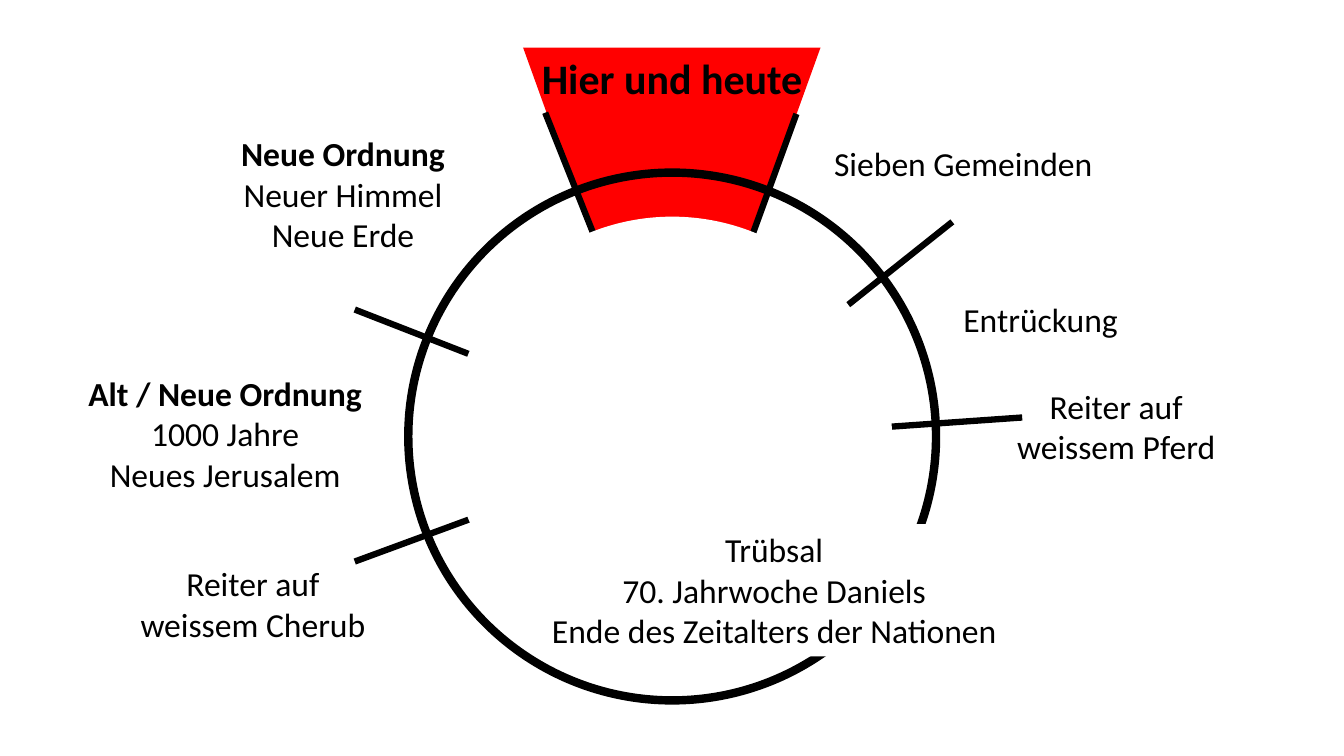
"""Draw a circular timeline of the ages with today highlighted at the top."""
from dataclasses import dataclass

from lxml.etree import SubElement
from pptx import Presentation
from pptx.dml.color import RGBColor
from pptx.enum.shapes import MSO_CONNECTOR, MSO_SHAPE
from pptx.enum.text import MSO_ANCHOR, MSO_AUTO_SIZE, PP_ALIGN
from pptx.oxml.ns import qn
from pptx.shapes.autoshape import Shape
from pptx.slide import Slide
from pptx.util import Cm, Pt

WIDTH, HEIGHT = 33.87, 19.05
CENTER_X, CENTER_Y = 16.94, 11.0
RING, DISC = 13.3, 11.08
BAND = 1.2
BLACK, WHITE, RED = "000000", "FFFFFF", "FF0000"


@dataclass
class Spoke:
    hub_x: float
    hub_y: float
    tip_x: float
    tip_y: float


@dataclass
class Label:
    left: float
    top: float
    width: float
    height: float
    lines: tuple[str, ...]
    heading: bool = False
    fill: str | None = None


SPOKES = [
    Spoke(17.04, 11.13, 13.74, 2.84),
    Spoke(17.04, 11.2, 20.07, 2.87),
    Spoke(17.04, 11.13, 24, 5.59),
    Spoke(17.04, 11.13, 25.76, 10.52),
    Spoke(17.15, 11.13, 8.94, 14.15),
    Spoke(17.15, 11, 8.94, 7.8),
]

LABELS = [
    Label(20.73, 3.48, 7.09, 1.28, ("Sieben Gemeinden",)),
    Label(24, 7.42, 4.45, 1.28, ("Entrückung",)),
    Label(25.35, 9.6, 5.56, 2.31, ("Reiter auf", "weissem Pferd")),
    Label(13.59, 13.21, 11.84, 3.33,
          ("Trübsal", "70. Jahrwoche Daniels", "Ende des Zeitalters der Nationen"),
          fill=WHITE),
    Label(3.25, 14.07, 6.25, 2.31, ("Reiter auf", "weissem Cherub")),
    Label(1.93, 9.27, 7.49, 3.33,
          ("Alt / Neue Ordnung", "1000 Jahre", "Neues Jerusalem"), heading=True),
    Label(5.66, 3.23, 5.97, 3.33,
          ("Neue Ordnung", "Neuer Himmel", "Neue Erde"), heading=True),
]


def color(code: str) -> RGBColor:
    """Turn a hex string into a colour."""
    return RGBColor.from_string(code)


def add_filled(s: Slide, kind: MSO_SHAPE, left: float, top: float,
               width: float, height: float, fill: str) -> Shape:
    """Add a filled shape without outline."""
    sp = s.shapes.add_shape(kind, Cm(left), Cm(top), Cm(width), Cm(height))
    sp.shadow.inherit = False
    sp.fill.solid()
    sp.fill.fore_color.rgb = color(fill)
    sp.line.fill.background()
    return sp


def add_circle(s: Slide, size: float, fill: str) -> Shape:
    """Add a circle around the common centre."""
    return add_filled(s, MSO_SHAPE.OVAL, CENTER_X - size / 2, CENTER_Y - size / 2,
                      size, size, fill)


def add_spoke(s: Slide, spoke: Spoke) -> None:
    """Add a line from the hub across the ring."""
    line = s.shapes.add_connector(MSO_CONNECTOR.STRAIGHT, Cm(spoke.hub_x), Cm(spoke.hub_y),
                                  Cm(spoke.tip_x), Cm(spoke.tip_y))
    line.line.color.rgb = color(BLACK)
    line.line.width = Pt(4.5)
    SubElement(line.element.spPr, qn("a:effectLst"))


def write(sp: Shape, lines: tuple[str, ...], size: int, heading: bool) -> None:
    """Fill a shape with centred lines, the first one bold for a heading."""
    tf = sp.text_frame
    tf.text = "\n".join(lines)
    tf.word_wrap = False
    tf.auto_size = MSO_AUTO_SIZE.SHAPE_TO_FIT_TEXT
    tf.vertical_anchor = MSO_ANCHOR.TOP
    for i, p in enumerate(tf.paragraphs):
        p.alignment = PP_ALIGN.CENTER
        p.font.name = "Calibri"
        p.font.size = Pt(size)
        p.font.bold = heading and i == 0
        p.font.color.rgb = color(BLACK)


def add_label(s: Slide, label: Label) -> None:
    """Add the text beside one section of the ring."""
    sp = s.shapes.add_textbox(Cm(label.left), Cm(label.top), Cm(label.width), Cm(label.height))
    if label.fill:
        sp.fill.solid()
        sp.fill.fore_color.rgb = color(label.fill)
    write(sp, label.lines, 24, label.heading)


def place_title(s: Slide) -> None:
    """Move the title onto the red sector, in front of it."""
    title = s.shapes.title
    title.left, title.top, title.width, title.height = Cm(13.36), Cm(BAND), Cm(7.16), Cm(1.54)
    write(title, ("Hier und heute",), 30, True)
    s.shapes.element.append(title.element)


def main() -> None:
    """Build and save the slide."""
    prs = Presentation()
    prs.slide_width, prs.slide_height = Cm(WIDTH), Cm(HEIGHT)
    s = prs.slides.add_slide(prs.slide_layouts[5])

    sector = add_filled(s, MSO_SHAPE.TRAPEZOID, 12.75, 0, 8.36, 9.04, RED)
    sector.adjustments[0] = 0.39
    sector.rotation = 180
    ring = add_circle(s, RING, WHITE)
    ring.fill.background()
    ring.line.color.rgb = color(BLACK)
    ring.line.width = Pt(6)
    for spoke in SPOKES:
        add_spoke(s, spoke)
    add_circle(s, DISC, WHITE)
    place_title(s)
    for label in LABELS:
        add_label(s, label)
    add_filled(s, MSO_SHAPE.RECTANGLE, 0, 0, WIDTH, BAND, WHITE)
    prs.save("out.pptx")


if __name__ == "__main__":
    main()
